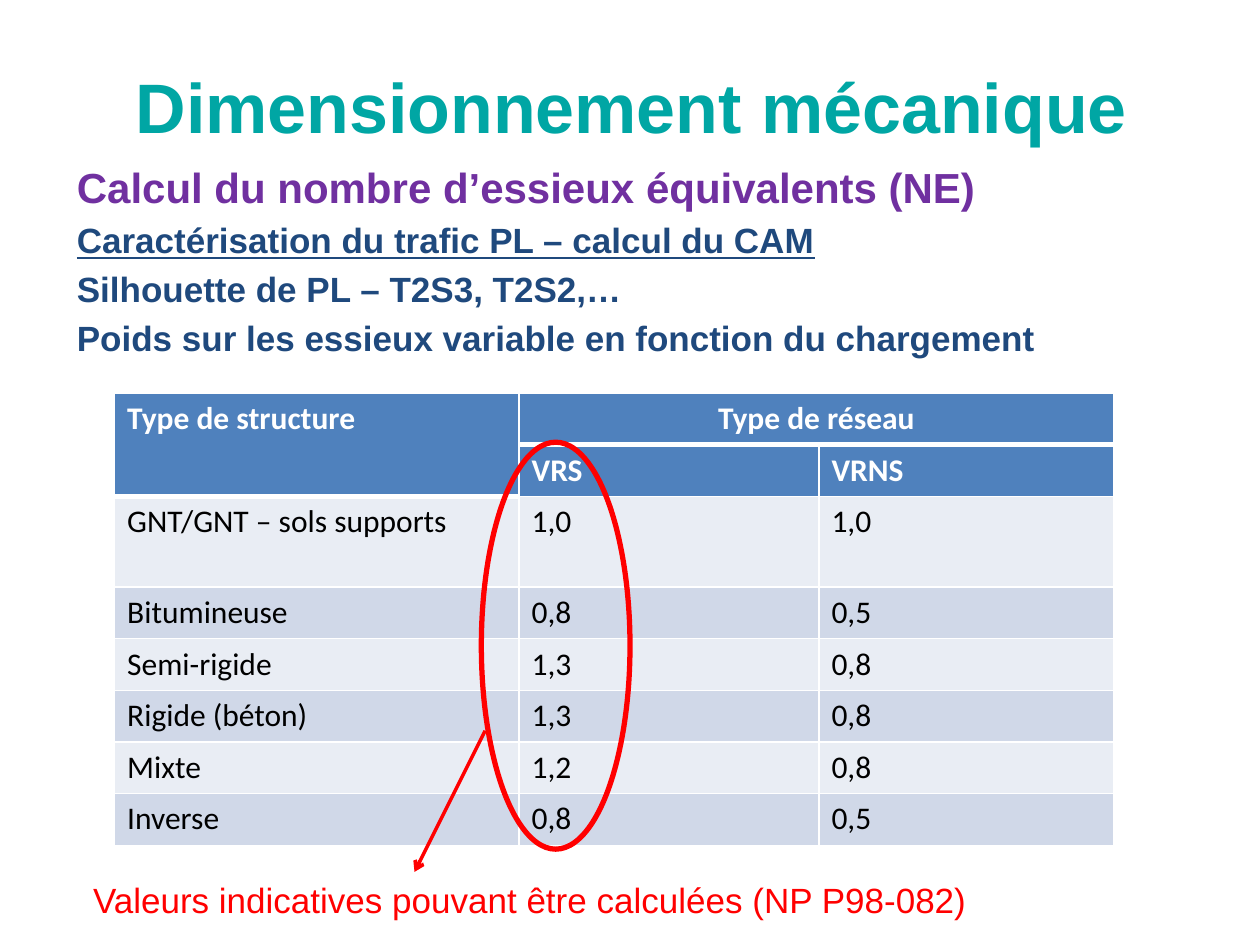
from lxml import etree
from pptx import Presentation
from pptx.dml.color import RGBColor
from pptx.enum import shapes, text
from pptx.oxml import ns
from pptx.util import Inches, Pt

TEAL = RGBColor(0x00, 0xA6, 0xA4)
PURPLE = RGBColor(0x70, 0x30, 0xA0)
NAVY = RGBColor(0x1F, 0x49, 0x7D)
RED = RGBColor(0xFF, 0x00, 0x00)
WHITE = RGBColor(0xFF, 0xFF, 0xFF)
BLACK = RGBColor(0x00, 0x00, 0x00)
HEADER = RGBColor(0x4F, 0x81, 0xBD)
BAND_LIGHT = RGBColor(0xE9, 0xED, 0xF4)
BAND_DARK = RGBColor(0xD0, 0xD8, 0xE8)


def add_span(para, words, size, color, font="Arial", bold=False, underline=False):
    span = para.add_run()
    span.text = words
    span.font.name = font
    span.font.size = Pt(size)
    span.font.color.rgb = color
    span.font.bold = bold
    if underline:
        span.font.underline = True


def add_borders(cell, widths):
    properties = cell._tc.get_or_add_tcPr()
    for position, (side, width) in enumerate(widths.items()):
        line = etree.Element(ns.qn("a:" + side), w=str(Pt(width)))
        fill = etree.SubElement(line, ns.qn("a:solidFill"))
        etree.SubElement(fill, ns.qn("a:srgbClr"), val=str(WHITE))
        properties.insert(position, line)


deck = Presentation()
deck.slide_width, deck.slide_height = Inches(10), Inches(7.5)
page = deck.slides.add_slide(deck.slide_layouts[1])

# Title
title = page.shapes.title
title.left, title.top = Inches(0.51), Inches(0.21)
title.width, title.height = Inches(9), Inches(1.25)
para = title.text_frame.paragraphs[0]
para.alignment = text.PP_ALIGN.CENTER
add_span(para, "Dimensionnement mécanique", 40, TEAL, bold=True)

# Introductory lines, without bullets
body = page.placeholders[1]
body.left, body.top = Inches(0.51), Inches(1.23)
body.width, body.height = Inches(9), Inches(5.83)
body.text_frame.auto_size = text.MSO_AUTO_SIZE.NONE
lines = [
    ("Calcul du nombre d’essieux équivalents (NE)", 24, PURPLE, False),
    ("Caractérisation du trafic PL – calcul du CAM", 20, NAVY, True),
    ("Silhouette de PL – T2S3, T2S2,…", 20, NAVY, False),
    ("Poids sur les essieux variable en fonction du chargement", 20, NAVY, False),
]
for index, (words, size, color, underline) in enumerate(lines):
    para = body.text_frame.add_paragraph() if index else body.text_frame.paragraphs[0]
    properties = para._p.get_or_add_pPr()
    properties.set("marL", "0")
    properties.set("indent", "0")
    etree.SubElement(properties, ns.qn("a:buNone"))
    para.space_before = Pt(0.2 * size if index else 0)
    add_span(para, words, size, color, bold=True, underline=underline)

# Note under the table
note = page.shapes.add_textbox(Inches(0.64), Inches(6.92), Inches(8.03), Inches(0.44))
note.text_frame.word_wrap = True
add_span(note.text_frame.paragraphs[0],
         "Valeurs indicatives pouvant être calculées (NP P98-082)", 20, RED)

# Table of coefficients by structure and network
rows = [
    ("Type de structure", "Type de réseau", ""),
    ("", "VRS", "VRNS"),
    ("GNT/GNT – sols supports", "1,0", "1,0"),
    ("Bitumineuse", "0,8", "0,5"),
    ("Semi-rigide", "1,3", "0,8"),
    ("Rigide (béton)", "1,3", "0,8"),
    ("Mixte", "1,2", "0,8"),
    ("Inverse", "0,8", "0,5"),
]
table = page.shapes.add_table(len(rows), 3, Inches(0.91), Inches(3.12),
                              Inches(7.93), Inches(3.6)).table
for column, width in zip(table.columns, (3.21, 2.38, 2.34)):
    column.width = Inches(width)
table.cell(0, 0).merge(table.cell(1, 0))
table.cell(0, 1).merge(table.cell(0, 2))

for r, values in enumerate(rows):
    table.rows[r].height = Inches(0.72 if r == 2 else 0.41)
    is_header = r < 2
    for c, words in enumerate(values):
        cell = table.cell(r, c)
        cell.fill.solid()
        cell.fill.fore_color.rgb = HEADER if is_header else (BAND_DARK if r % 2 else BAND_LIGHT)
        # The thick rule lies under the top header cells
        header_end = 1 if c == 0 else 0
        thick_bottom = r <= header_end
        thick_top = r == header_end + 1
        add_borders(cell, {"lnL": 1, "lnR": 1, "lnT": 3 if thick_top else 1,
                           "lnB": 3 if thick_bottom else 1})
        if words:
            add_span(cell.text_frame.paragraphs[0], words, 18,
                     WHITE if is_header else BLACK, "Calibri", is_header)
table.cell(0, 1).text_frame.paragraphs[0].alignment = text.PP_ALIGN.CENTER

# Ring around the VRS values
ring = page.shapes.add_shape(shapes.MSO_SHAPE.OVAL, Inches(3.82), Inches(3.51),
                             Inches(1.18), Inches(3.23))
ring.shadow.inherit = False
ring.fill.background()
ring.line.color.rgb = RED
ring.line.width = Pt(3)

# Arrow from the ring to the note
arrow = page.shapes.add_connector(shapes.MSO_CONNECTOR.STRAIGHT, Inches(3.85), Inches(5.8),
                                  Inches(3.29), Inches(6.92))
arrow.line.color.rgb = RED
arrow.line.width = Pt(2)
etree.SubElement(arrow.line._get_or_add_ln(), ns.qn("a:tailEnd"), type="arrow")
etree.SubElement(arrow._element.spPr, ns.qn("a:effectLst"))

deck.save("out.pptx")
